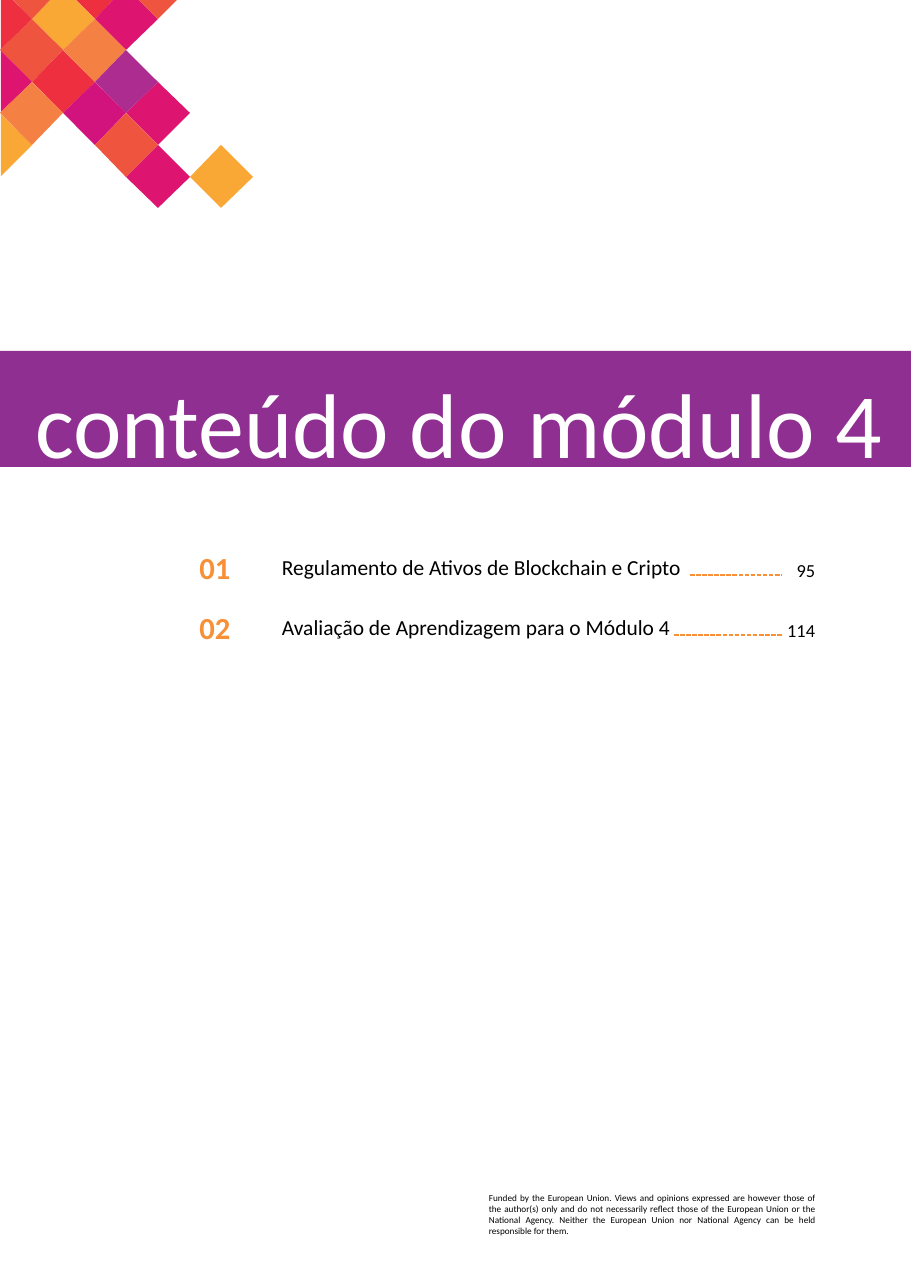
"""Contents page of module 4: diamond mosaic, title band, entries and funding note."""
import dataclasses

import pptx
import pptx.dml.color
import pptx.enum.dml
import pptx.enum.shapes
import pptx.enum.text
import pptx.oxml.ns
import pptx.util
from lxml import etree

EMU_PER_PX = 8298
ALIGN = pptx.enum.text.PP_ALIGN
ANCHOR = pptx.enum.text.MSO_ANCHOR


@dataclasses.dataclass(frozen=True)
class Theme:
    """Colours, font and type sizes of the page."""
    font: str = "Calibri"
    band: str = "8E2F91"
    accent: str = "F79037"
    ink: str = "000000"
    paper: str = "FFFFFF"
    red: str = "ED2F40"
    coral: str = "EF543F"
    orange: str = "F48043"
    amber: str = "F9A835"
    pink: str = "DD1470"
    magenta: str = "D3137D"
    purple: str = "AC2C90"
    title_size: int = 60
    number_size: int = 20
    entry_size: int = 14
    page_size: int = 12
    note_size: int = 6


THEME = Theme()
MOSAIC_STEP = 31.6
MOSAIC_TOP = 18.6
MOSAIC = [
    (3, -1, THEME.red), (4, 0, THEME.pink), (5, -1, THEME.coral),
    (2, 0, THEME.amber), (1, 1, THEME.coral), (2, 2, THEME.red),
    (3, 1, THEME.orange), (0, 2, THEME.pink), (0, 4, THEME.amber),
    (1, 3, THEME.orange), (7, 5, THEME.amber), (5, 5, THEME.pink),
    (5, 3, THEME.pink), (4, 2, THEME.purple), (3, 3, THEME.magenta),
    (4, 4, THEME.coral), (1, -1, THEME.coral), (0, 0, THEME.red),
]
ENTRIES = [
    ("01", "Regulamento de Ativos de Blockchain e Cripto", "95", 690),
    ("02", "Avaliação de Aprendizagem para o Módulo 4", "114", 674),
]
ENTRY_PITCH = 60
NOTE = (
    "Funded by the European Union. Views and opinions expressed are however "
    "those of the author(s) only and do not necessarily reflect those of the "
    "European Union or the National Agency. Neither the European Union nor "
    "National Agency can be held responsible for them."
)


def px(n):
    """Turn pixels into EMU."""
    return pptx.util.Emu(n * EMU_PER_PX)


def rgb(color):
    """Turn a hex string into a colour."""
    return pptx.dml.color.RGBColor.from_string(color)


def paint(sp, color):
    """Give a shape a flat fill without line or shadow."""
    sp.fill.solid()
    sp.fill.fore_color.rgb = rgb(color)
    sp.line.fill.background()
    sp.shadow.inherit = False


def set_text(sp, text, size, color, align=ALIGN.LEFT, anchor=ANCHOR.MIDDLE, bold=False):
    """Write one formatted paragraph into a shape."""
    tf = sp.text_frame
    tf.word_wrap = True
    tf.auto_size = pptx.enum.text.MSO_AUTO_SIZE.NONE
    tf.vertical_anchor = anchor
    p = tf.paragraphs[0]
    p.text = text
    p.alignment = align
    p.font.name = THEME.font
    p.font.size = pptx.util.Pt(size)
    p.font.bold = bold
    p.font.color.rgb = rgb(color)


def add_text(s, box, text, size, color, **style):
    """Add a text box at the given left, top, width and height."""
    sp = s.shapes.add_textbox(*map(px, box))
    set_text(sp, text, size, color, **style)


def clip(points, axis, limit):
    """Cut off the part of a polygon that lies below a limit on one axis."""
    kept = []
    for a, b in zip(points, points[1:] + points[:1]):
        if a[axis] >= limit:
            kept.append(a)
        if (a[axis] - limit) * (b[axis] - limit) < 0:
            t = (limit - a[axis]) / (b[axis] - a[axis])
            kept.append(tuple(m + t * (n - m) for m, n in zip(a, b)))
    return kept


def add_diamond(s, col, row, color):
    """Add one mosaic tile, cut at the page edges."""
    corners = [(col, row - 1), (col + 1, row), (col, row + 1), (col - 1, row)]
    points = [(x * MOSAIC_STEP, MOSAIC_TOP + y * MOSAIC_STEP) for x, y in corners]
    points = clip(points, 1, 0)
    if col == 0:
        points = clip(points, 0, 1)
    points = [(round(x), round(y)) for x, y in points]
    builder = s.shapes.build_freeform(*points[0], scale=EMU_PER_PX)
    builder.add_line_segments(points[1:], close=True)
    paint(builder.convert_to_shape(), color)


def add_leader(s, left, right, y):
    """Add a dashed line that leads to a page number."""
    line = s.shapes.add_connector(
        pptx.enum.shapes.MSO_CONNECTOR.STRAIGHT, px(left), px(y), px(right), px(y))
    line.line.color.rgb = rgb(THEME.accent)
    line.line.width = pptx.util.Pt(1)
    line.line.dash_style = pptx.enum.dml.MSO_LINE.SQUARE_DOT
    etree.SubElement(line.element.spPr, pptx.oxml.ns.qn("a:effectLst"))


def add_entry(s, index, number, text, page, leader_left):
    """Add one row of the contents."""
    shift = index * ENTRY_PITCH
    add_text(s, (176, 546 + shift, 78, 42), number, THEME.number_size, THEME.accent,
             align=ALIGN.CENTER, bold=True)
    add_text(s, (271, 546 + shift, 479, 42), text, THEME.entry_size, THEME.ink)
    add_text(s, (771, 549 + shift, 55, 42), page, THEME.page_size, THEME.ink,
             align=ALIGN.RIGHT)
    add_leader(s, leader_left, 782, 575 + shift)


def add_title(s, text):
    """Add the band and set the title on top of it."""
    band = s.shapes.add_shape(
        pptx.enum.shapes.MSO_SHAPE.RECTANGLE, *map(px, (0, 351, 911, 116)))
    paint(band, THEME.band)
    title = s.shapes.title
    title.left, title.top, title.width, title.height = map(px, (24, 357, 887, 117))
    set_text(title, text, THEME.title_size, THEME.paper, anchor=ANCHOR.TOP)
    title.text_frame.margin_top = px(10)
    band.element.addnext(title.element)


def main():
    """Build the page and save it."""
    prs = pptx.Presentation()
    prs.slide_width, prs.slide_height = px(911), px(1288)
    s = prs.slides.add_slide(prs.slide_layouts.get_by_name("Title Only"))
    add_title(s, "conteúdo do módulo 4")
    for tile in MOSAIC:
        add_diamond(s, *tile)
    for index, entry in enumerate(ENTRIES):
        add_entry(s, index, *entry)
    add_text(s, (478, 1187, 348, 55), NOTE, THEME.note_size, THEME.ink,
             align=ALIGN.JUSTIFY, anchor=ANCHOR.TOP)
    prs.save("out.pptx")


if __name__ == "__main__":
    main()
